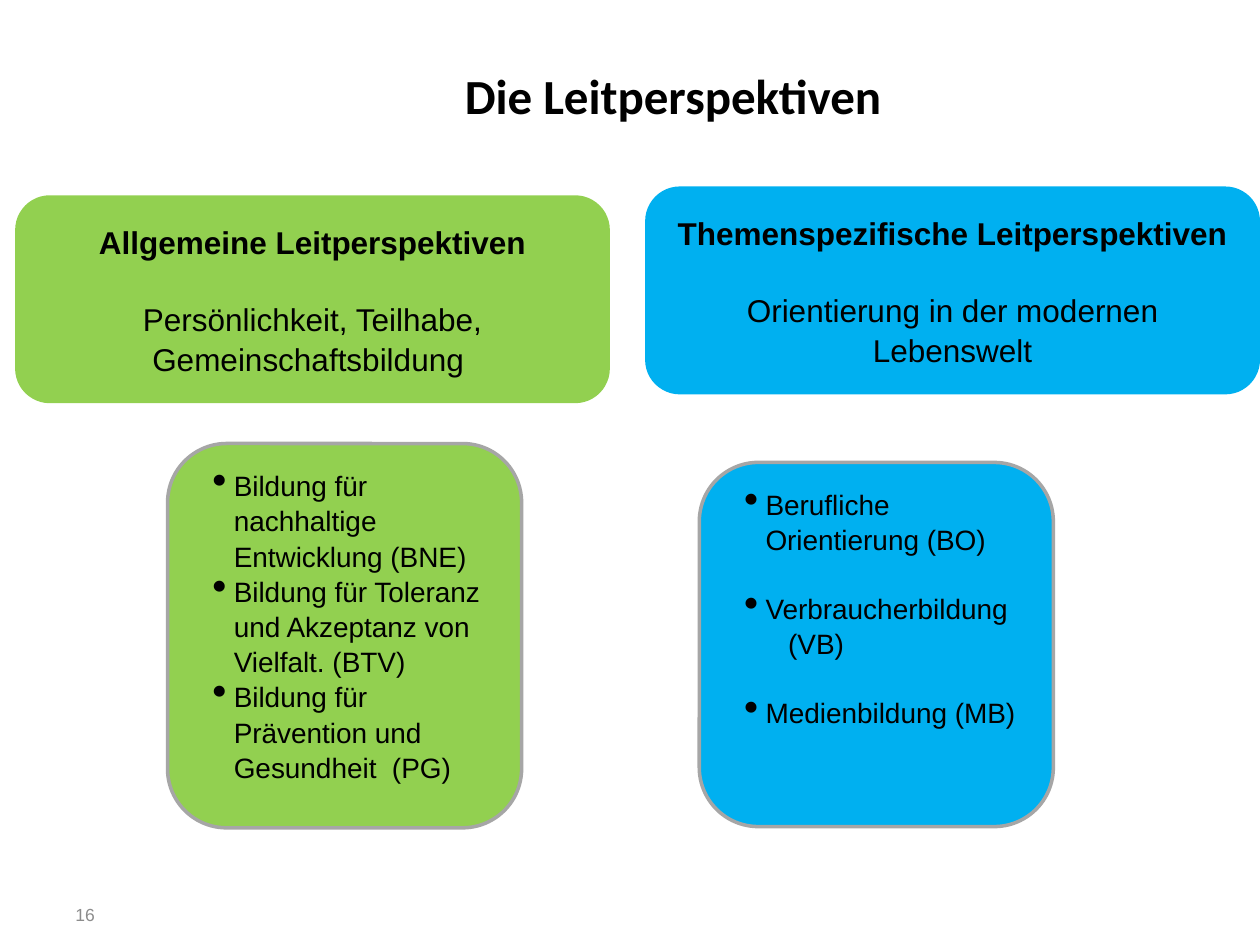
"""Build the slide on general and topic-specific guiding perspectives."""
from dataclasses import dataclass

from lxml import etree
from pptx import Presentation
from pptx.dml.color import RGBColor
from pptx.enum import shapes, text
from pptx.oxml import ns
from pptx.util import Inches, Pt

GREEN = RGBColor(0x92, 0xD0, 0x50)
BLUE = RGBColor(0x00, 0xB0, 0xF0)
BLACK = RGBColor(0x00, 0x00, 0x00)
BORDER = RGBColor(0xA6, 0xA6, 0xA6)
MUTED = RGBColor(0x8C, 0x8C, 0x8C)
LINE_SPACING = 1.05
HEADING_GAP = Pt(21.7)
TOPIC_GAP = Pt(19.2)


@dataclass(frozen=True)
class Box:
    left: float
    top: float
    width: float
    height: float

    def lengths(self):
        return [Inches(v) for v in (self.left, self.top, self.width, self.height)]


@dataclass(frozen=True)
class Topic:
    wording: str
    gap: int = 0
    indent: float = 0.29
    bulleted: bool = True


@dataclass(frozen=True)
class Perspective:
    color: RGBColor
    heading: str
    summary: str
    heading_box: Box
    topics: tuple[Topic, ...]
    topics_box: Box


PERSPECTIVES = (
    Perspective(
        BLUE, "Themenspezifische Leitperspektiven",
        "Orientierung in der modernen Lebenswelt",
        Box(5.12, 1.48, 4.88, 1.65),
        (Topic("Berufliche Orientierung (BO)"),
         Topic("Verbraucherbildung", TOPIC_GAP),
         Topic("(VB)", indent=0.47, bulleted=False),
         Topic("Medienbildung (MB)", TOPIC_GAP)),
        Box(5.55, 3.67, 2.81, 2.89),
    ),
    Perspective(
        GREEN, "Allgemeine Leitperspektiven",
        "Persönlichkeit, Teilhabe, Gemeinschaftsbildung ",
        Box(0.12, 1.55, 4.72, 1.65),
        (Topic("Bildung für nachhaltige Entwicklung (BNE)"),
         Topic("Bildung für Toleranz und Akzeptanz von Vielfalt. (BTV)"),
         Topic("Bildung für Prävention und Gesundheit  (PG)")),
        Box(1.33, 3.52, 2.81, 3.05),
    ),
)


def write(paragraph, wording: str, size: int, align, name: str = "Arial",
          color: RGBColor = BLACK, bold: bool = False) -> None:
    paragraph.text = wording
    paragraph.alignment = align
    font = paragraph.font
    font.name, font.size, font.bold = name, Pt(size), bold
    font.color.rgb = color


def add_panel(slide, box: Box, color: RGBColor, anchor):
    panel = slide.shapes.add_shape(shapes.MSO_SHAPE.ROUNDED_RECTANGLE, *box.lengths())
    panel.shadow.inherit = False
    panel.fill.solid()
    panel.fill.fore_color.rgb = color
    panel.line.fill.background()
    panel.text_frame.word_wrap = True
    panel.text_frame.vertical_anchor = anchor
    return panel


def add_heading(slide, perspective: Perspective) -> None:
    frame = add_panel(slide, perspective.heading_box, perspective.color,
                      text.MSO_ANCHOR.MIDDLE).text_frame
    heading, summary = frame.paragraphs[0], frame.add_paragraph()
    write(heading, perspective.heading, 18, text.PP_ALIGN.CENTER, bold=True)
    write(summary, perspective.summary, 18, text.PP_ALIGN.CENTER)
    summary.space_before = HEADING_GAP
    heading.line_spacing = summary.line_spacing = LINE_SPACING


def format_topic(paragraph, topic: Topic) -> None:
    write(paragraph, topic.wording, 16, text.PP_ALIGN.LEFT)
    paragraph.line_spacing = LINE_SPACING
    paragraph.space_before = topic.gap
    props = paragraph._p.get_or_add_pPr()
    props.set("marL", str(Inches(topic.indent)))
    if topic.bulleted:
        props.set("indent", str(Inches(-0.17)))
        bullet_size = etree.Element(ns.qn("a:buSzPct"), val="150000")
        bullet = etree.Element(ns.qn("a:buChar"), char="•")
        defaults = props.find(ns.qn("a:defRPr"))
        defaults.addprevious(bullet_size)
        defaults.addprevious(bullet)


def add_topics(slide, perspective: Perspective) -> None:
    panel = add_panel(slide, perspective.topics_box, perspective.color, text.MSO_ANCHOR.TOP)
    panel.line.color.rgb = BORDER
    panel.line.width = Pt(2)
    frame = panel.text_frame
    for index, topic in enumerate(perspective.topics):
        format_topic(frame.add_paragraph() if index else frame.paragraphs[0], topic)


def add_label(slide, box: Box, wording: str, size: int, align, wrap: bool, **style) -> None:
    frame = slide.shapes.add_textbox(*box.lengths()).text_frame
    frame.word_wrap = wrap
    frame.vertical_anchor = text.MSO_ANCHOR.MIDDLE
    write(frame.paragraphs[0], wording, size, align, **style)


def main() -> None:
    deck = Presentation()
    deck.slide_width, deck.slide_height = Inches(10), Inches(7.5)
    slide = deck.slides.add_slide(deck.slide_layouts[6])
    add_label(slide, Box(0.28, 7.06, 0.79, 0.4), "16", 10, text.PP_ALIGN.CENTER,
              True, color=MUTED)
    add_label(slide, Box(3.59, 0.47, 3.55, 0.57), "Die Leitperspektiven", 28,
              text.PP_ALIGN.LEFT, False, name="Calibri", bold=True)
    for perspective in PERSPECTIVES:
        add_heading(slide, perspective)
        add_topics(slide, perspective)
    deck.save("out.pptx")


if __name__ == "__main__":
    main()
